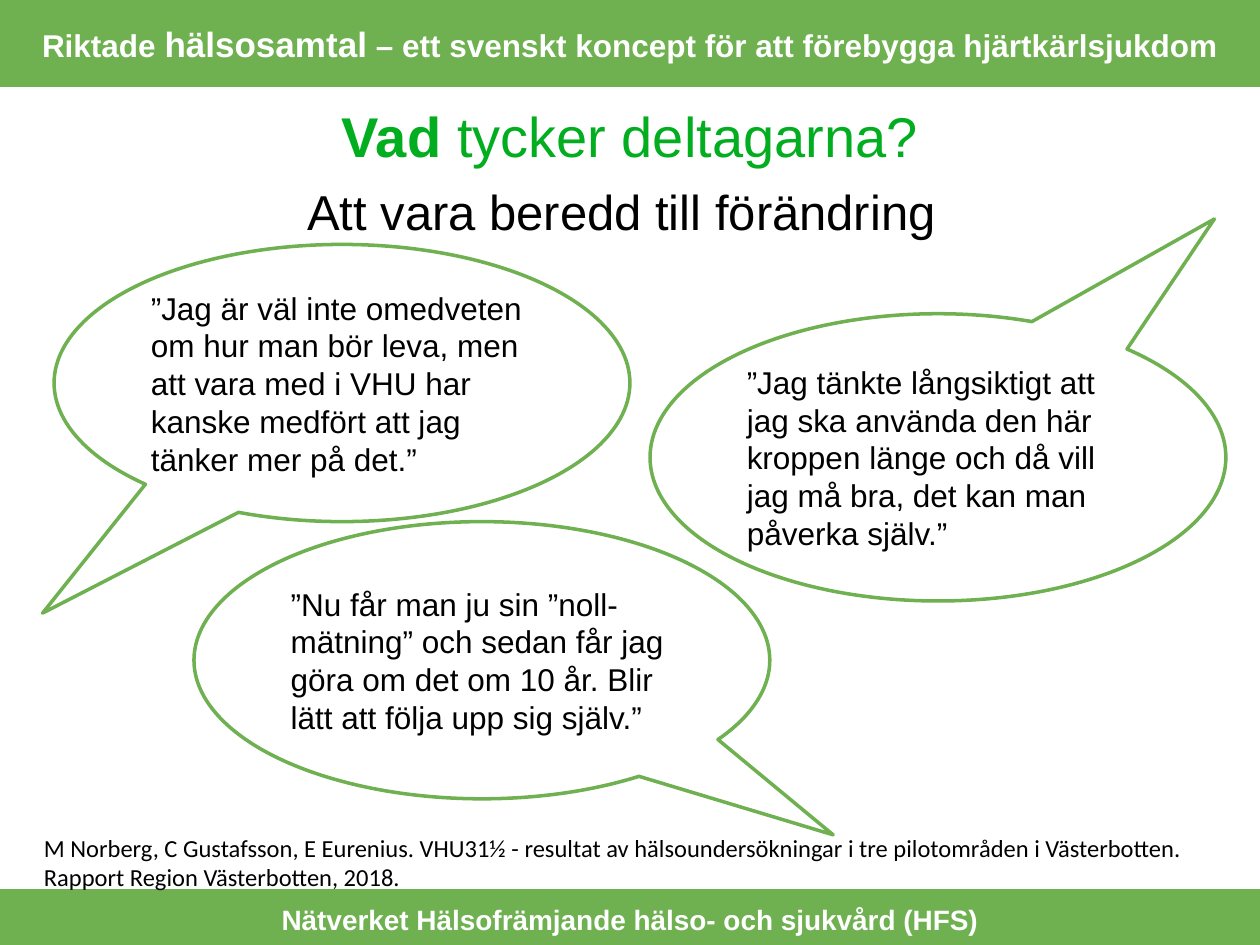
from dataclasses import dataclass

from pptx import Presentation
from pptx.dml.color import RGBColor
from pptx.enum.shapes import MSO_SHAPE as Shape
from pptx.enum.text import MSO_ANCHOR as Anchor, PP_ALIGN as Align
from pptx.util import Inches, Pt


@dataclass(frozen=True)
class Theme:
    green: str = "6FB050"
    title: str = "02AE1F"
    white: str = "FFFFFF"
    black: str = "000000"
    font: str = "Arial"
    cite: str = "Calibri"
    line: float = 2
    head: int = 32
    sub: int = 28
    big: int = 20
    body: int = 18
    foot: int = 16
    small: int = 14


THEME = Theme()

QUOTES = [
    ((0.43, 1.94, 4.57, 2.2), (-0.52, 0.83),
     "”Jag är väl inte omedveten om hur man bör leva, men att vara med i VHU "
     "har kanske medfört att jag tänker mer på det.”"),
    ((5.16, 2.49, 4.57, 2.28), (0.48, -0.83),
     "”Jag tänkte långsiktigt att jag ska använda den här kroppen länge och "
     "då vill jag må bra, det kan man påverka själv.”"),
    ((1.54, 4.14, 4.57, 2.2), (0.61, 0.63),
     "”Nu får man ju sin ”noll-mätning” och sedan får jag göra om det om "
     "10 år. Blir lätt att följa upp sig själv.”"),
]


def add_run(para, text, color, **form):
    run = para.add_run()
    run.text = text
    values = {"name": THEME.font, "size": THEME.body, "bold": False} | form
    values["size"] = Pt(values["size"])
    for key, value in values.items():
        setattr(run.font, key, value)
    run.font.color.rgb = RGBColor.from_string(color)


def add_shape(slide, kind, box, fill):
    shape = slide.shapes.add_shape(kind, *map(Inches, box))
    shape.shadow.inherit = False
    shape.fill.solid()
    shape.fill.fore_color.rgb = RGBColor.from_string(fill)
    shape.line.color.rgb = RGBColor.from_string(THEME.green)
    shape.line.width = Pt(THEME.line)
    return shape


def add_text(slide, box, lines, color, align=Align.CENTER, wrap=True):
    """Add a text box; each line is a list of (text, format) runs."""
    frame = slide.shapes.add_textbox(*map(Inches, box)).text_frame
    frame.word_wrap = wrap
    for i, runs in enumerate(lines):
        para = frame.add_paragraph() if i else frame.paragraphs[0]
        para.alignment = align
        for text, form in runs:
            add_run(para, text, color, **form)


def add_quote(slide, box, tip, text):
    shape = add_shape(slide, Shape.OVAL_CALLOUT, box, THEME.white)
    for i, value in enumerate(tip):
        shape.adjustments[i] = value
    frame = shape.text_frame
    frame.word_wrap = True
    frame.vertical_anchor = Anchor.MIDDLE
    para = frame.paragraphs[0]
    para.alignment = Align.LEFT
    add_run(para, text, THEME.black)


def add_bands(slide):
    bold = {"bold": True}
    add_shape(slide, Shape.RECTANGLE, (0, 7.07, 10, 0.44), THEME.green)
    add_text(slide, (1.06, 7.11, 7.88, 0.52), [[
        ("Nätverket Hälsofrämjande hälso- och sjukvård (HFS)",
         bold | {"size": THEME.foot}),
    ]], THEME.white)
    add_shape(slide, Shape.RECTANGLE, (0, 0.01, 10, 0.67), THEME.green)
    add_text(slide, (0.12, 0.13, 9.76, 0.52), [[
        ("Riktade ", bold),
        ("hälsosamtal", bold | {"size": THEME.big}),
        (" – ett svenskt koncept för att förebygga hjärtkärlsjukdom", bold),
    ]], THEME.white)


def add_titles(slide):
    head = {"size": THEME.head}
    add_text(slide, (0.51, 0.76, 8.98, 0.64), [[
        ("Vad ", head | {"bold": True}),
        ("tycker deltagarna?", head),
    ]], THEME.title)
    add_text(slide, (2.34, 1.39, 5.25, 0.57), [[
        ("Att vara beredd till förändring", {"size": THEME.sub}),
    ]], THEME.black, Align.LEFT, wrap=False)


def add_source(slide):
    form = {"name": THEME.cite, "size": THEME.small}
    lines = [
        "M Norberg, C Gustafsson, E Eurenius. VHU31½ - resultat av "
        "hälsoundersökningar i tre pilotområden i Västerbotten.",
        "Rapport Region Västerbotten, 2018.",
    ]
    add_text(slide, (0.25, 6.56, 9.37, 0.57),
             [[(line, form)] for line in lines],
             THEME.black, Align.LEFT, wrap=False)


def main():
    deck = Presentation()
    deck.slide_width, deck.slide_height = Inches(10), Inches(7.5)
    slide = deck.slides.add_slide(deck.slide_layouts[6])
    add_bands(slide)
    add_titles(slide)
    for box, tip, text in QUOTES:
        add_quote(slide, box, tip, text)
    add_source(slide)
    deck.save("out.pptx")


if __name__ == "__main__":
    main()
